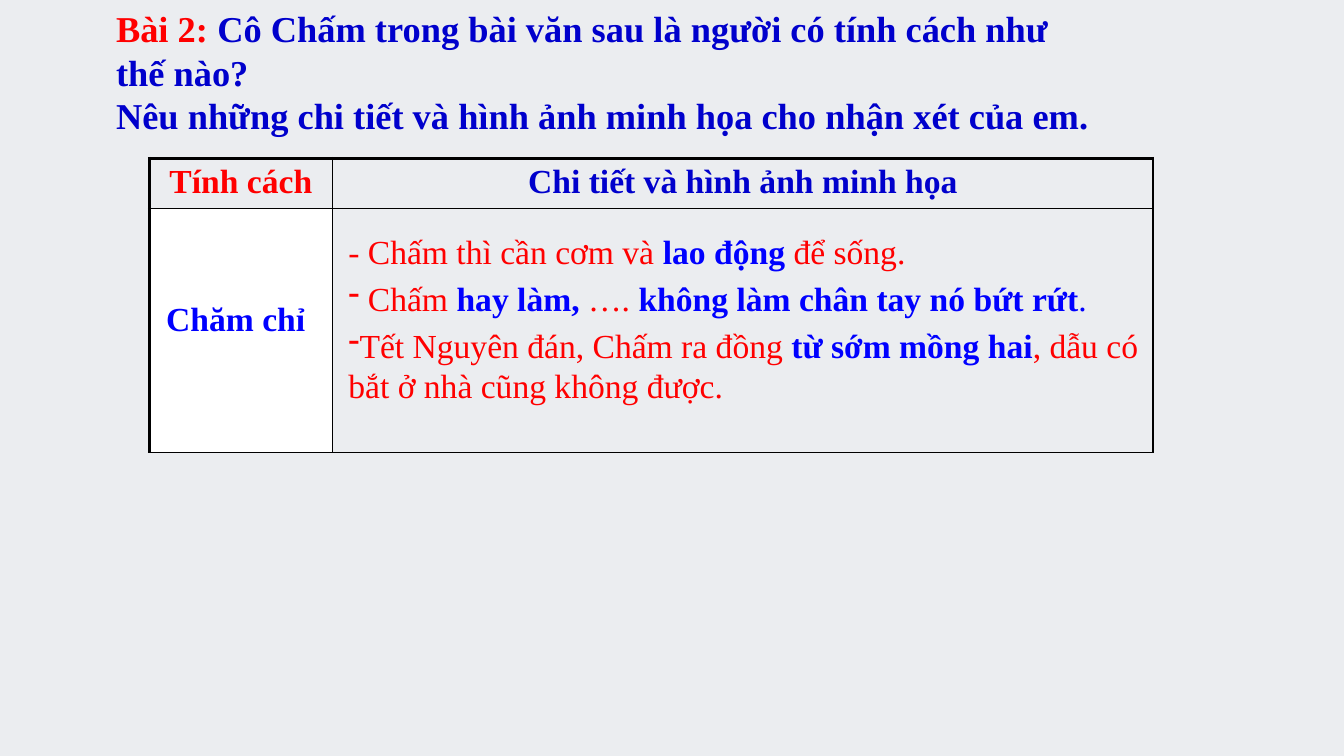
from dataclasses import dataclass

from lxml.etree import SubElement
from pptx import Presentation
from pptx.dml.color import RGBColor
from pptx.enum.text import MSO_ANCHOR, MSO_AUTO_SIZE, PP_ALIGN
from pptx.oxml import parse_xml
from pptx.oxml.ns import nsdecls, qn
from pptx.util import Cm, Pt

FONT = "Times New Roman"
RED, NAVY, BLUE = "FF0000", "0000CC", "0000FF"
BLACK, WHITE, PALE_GREY = "000000", "FFFFFF", "EBEDF0"
THICK, THIN = 2.25, 1


@dataclass
class Span:
    text: str
    color: str
    bold: bool = True


@dataclass
class Line:
    spans: list[Span]
    align: PP_ALIGN = PP_ALIGN.LEFT
    bullet: str = ""
    space_before: float = 0


@dataclass
class Box:
    left: float
    top: float
    width: float
    height: float
    lines: list[Line]


def centred(text: str, color: str) -> list[Line]:
    return [Line([Span(text, color)], PP_ALIGN.CENTER)]


TITLE = Box(2.67, 0.03, 25.3, 3.58, [
    Line([Span("Bài 2: ", RED),
          Span("Cô Chấm trong bài văn sau là người có tính cách như thế nào?", NAVY)]),
    Line([Span("Nêu những chi tiết và hình ảnh minh họa cho nhận xét của em.", NAVY)]),
])
HEADERS = [centred("Tính cách", RED), centred("Chi tiết và hình ảnh minh họa", NAVY)]
COLUMN_WIDTHS = [4.62, 20.68]
ROW_HEIGHTS = [1.27, 6.15]
ANSWERS = [
    Box(3.45, 7.39, 4.98, 2.13, centred("Chăm chỉ", BLUE)),
    Box(8.53, 5.69, 20.52, 5.54, [
        Line([Span("- Chấm thì cần cơm và ", RED, False),
              Span("lao động ", BLUE),
              Span("để sống.", RED, False)]),
        Line([Span(" Chấm ", RED, False),
              Span("hay làm, ", BLUE),
              Span("…. ", RED, False),
              Span("không làm chân tay nó bứt rứt", BLUE),
              Span(".", BLUE, False)], bullet="-", space_before=4.8),
        Line([Span("Tết Nguyên đán, Chấm ra đồng ", RED, False),
              Span("từ sớm mồng hai", BLUE),
              Span(", dẫu có bắt ở nhà cũng không được.", RED, False)],
             bullet="-", space_before=4.8),
    ]),
]


def rgb(color: str) -> RGBColor:
    return RGBColor.from_string(color)


def write_lines(frame, lines: list[Line], size: float) -> None:
    for index, line in enumerate(lines):
        para = frame.paragraphs[0] if index == 0 else frame.add_paragraph()
        if line.bullet:
            properties = para._p.get_or_add_pPr()
            SubElement(properties, qn("a:buFontTx"))
            SubElement(properties, qn("a:buChar"), char=line.bullet)
        para.alignment = line.align
        if line.space_before:
            para.space_before = Pt(line.space_before)
        for span in line.spans:
            run = para.add_run()
            run.text = span.text
            formats = {"name": FONT, "size": Pt(size), "bold": span.bold}
            for attribute, value in formats.items():
                setattr(run.font, attribute, value)
            run.font.color.rgb = rgb(span.color)


def fill_frame(frame, lines: list[Line], size: float) -> None:
    formats = {"word_wrap": True, "auto_size": MSO_AUTO_SIZE.NONE,
               "vertical_anchor": MSO_ANCHOR.TOP}
    for attribute, value in formats.items():
        setattr(frame, attribute, value)
    write_lines(frame, lines, size)


def set_borders(cell, widths: dict[str, float]) -> None:
    """Draw the cell's borders; widths run in the schema order L, R, T, B."""
    properties = cell._tc.get_or_add_tcPr()
    for index, (side, width) in enumerate(widths.items()):
        properties.insert(index, parse_xml(
            f'<a:ln{side} {nsdecls("a")} w="{Pt(width)}"><a:solidFill>'
            f'<a:srgbClr val="{BLACK}"/></a:solidFill></a:ln{side}>'))


def add_answer_table(slide) -> None:
    rows, columns = len(ROW_HEIGHTS), len(COLUMN_WIDTHS)
    table = slide.shapes.add_table(
        rows, columns, Cm(3.76), Cm(3.99),
        Cm(sum(COLUMN_WIDTHS)), Cm(sum(ROW_HEIGHTS))).table
    table.first_row = table.horz_banding = False
    for column, width in zip(table.columns, COLUMN_WIDTHS):
        column.width = Cm(width)
    for row, height in zip(table.rows, ROW_HEIGHTS):
        row.height = Cm(height)
    for row in range(rows):
        for column in range(columns):
            cell = table.cell(row, column)
            cell.fill.background()
            set_borders(cell, {
                "L": THICK if column == 0 else THIN,
                "R": THICK if column == columns - 1 else THIN,
                "T": THICK if row == 0 else THIN,
                "B": THIN,
            })
    for column, lines in enumerate(HEADERS):
        write_lines(table.cell(0, column).text_frame, lines, 24)
    trait_cell = table.cell(1, 0)
    trait_cell.fill.solid()
    trait_cell.fill.fore_color.rgb = rgb(WHITE)


def main() -> None:
    deck = Presentation()
    deck.slide_width, deck.slide_height = Cm(33.87), Cm(19.05)
    page = deck.slides.add_slide(deck.slide_layouts[5])
    page.background.fill.solid()
    page.background.fill.fore_color.rgb = rgb(PALE_GREY)

    title = page.shapes.title
    for attribute in ("left", "top", "width", "height"):
        setattr(title, attribute, Cm(getattr(TITLE, attribute)))
    fill_frame(title.text_frame, TITLE.lines, 26)

    add_answer_table(page)
    for answer in ANSWERS:
        box = page.shapes.add_textbox(
            Cm(answer.left), Cm(answer.top), Cm(answer.width), Cm(answer.height))
        fill_frame(box.text_frame, answer.lines, 24)
    deck.save("out.pptx")


if __name__ == "__main__":
    main()
